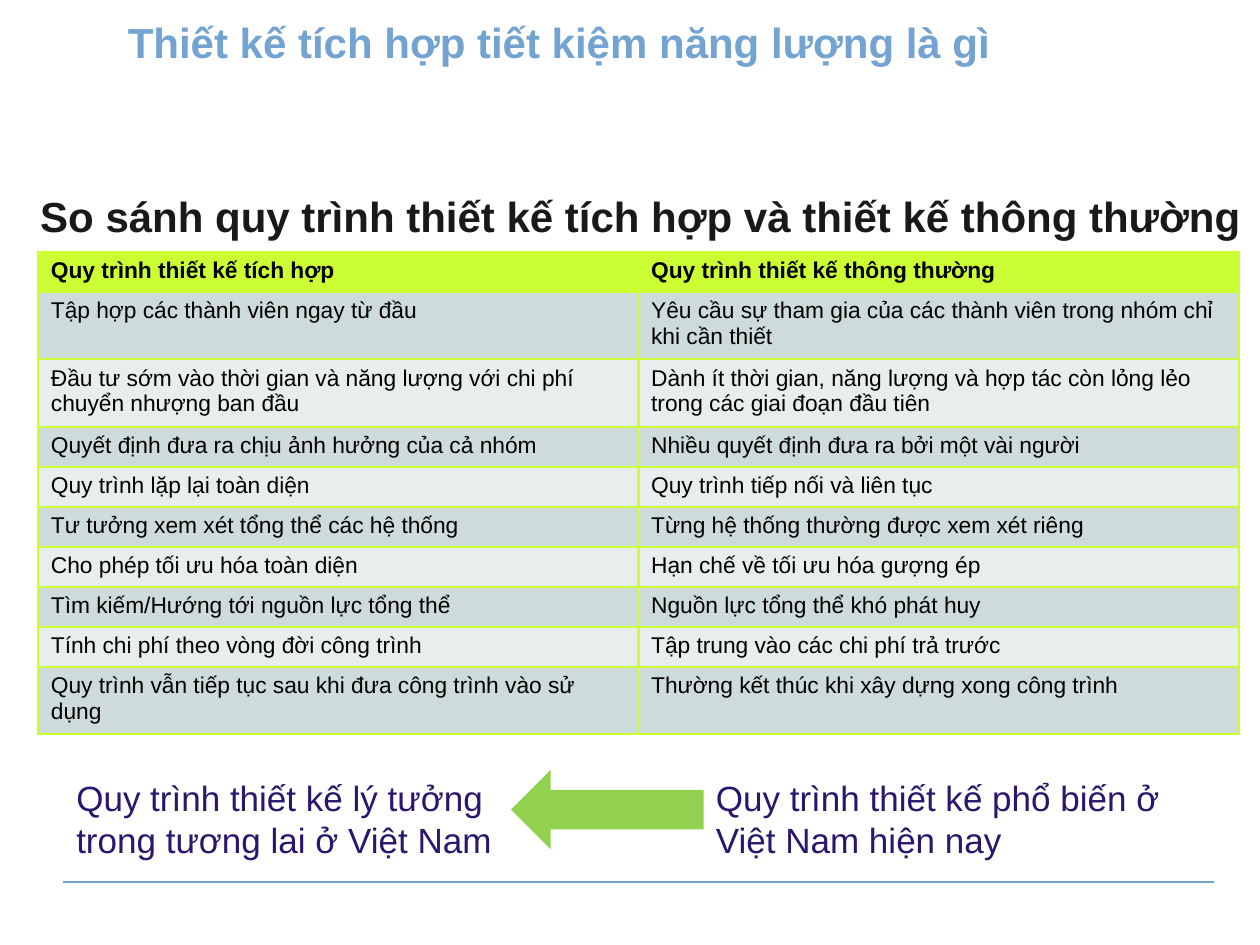
import pptx
import pptx.util
import pptx.dml.color
import pptx.enum.shapes
import pptx.enum.text
import pptx.oxml
import pptx.oxml.ns
from lxml import etree

Pt = pptx.util.Pt
Align = pptx.enum.text.PP_ALIGN
Anchor = pptx.enum.text.MSO_ANCHOR

# Content
HEAD = "Thiết kế tích hợp tiết kiệm năng lượng là gì"
TITLE = "So sánh quy trình thiết kế tích hợp và thiết kế thông thường"
IDEAL = "Quy trình thiết kế lý tưởng trong tương lai ở Việt Nam"
USUAL = "Quy trình thiết kế phổ biến ở Việt Nam hiện nay"
ROWS = [
    ("Quy trình thiết kế tích hợp", "Quy trình thiết kế thông thường"),
    ("Tập hợp các thành viên ngay từ đầu",
     "Yêu cầu sự tham gia của các thành viên trong nhóm chỉ khi cần thiết"),
    ("Đầu tư sớm vào thời gian và năng lượng với chi phí chuyển nhượng ban đầu",
     "Dành ít thời gian, năng lượng và hợp tác còn lỏng lẻo trong các giai đoạn đầu tiên"),
    ("Quyết định đưa ra chịu ảnh hưởng của cả nhóm",
     "Nhiều quyết định đưa ra bởi một vài người"),
    ("Quy trình lặp lại toàn diện", "Quy trình tiếp nối và liên tục"),
    ("Tư tưởng xem xét tổng thể các hệ thống",
     "Từng hệ thống thường được xem xét riêng"),
    ("Cho phép tối ưu hóa toàn diện", "Hạn chế về tối ưu hóa gượng ép"),
    ("Tìm kiếm/Hướng tới nguồn lực tổng thể", "Nguồn lực tổng thể khó phát huy"),
    ("Tính chi phí theo vòng đời công trình",
     "Tập trung vào các chi phí trả trước"),
    ("Quy trình vẫn tiếp tục sau khi đưa công trình vào sử dụng",
     "Thường kết thúc khi xây dựng xong công trình"),
]
TALL = {1, 2, 9}  # rows with two lines of text
LOW, HIGH = 22.9, 38.3

COLORS = {
    "blue": "73A3D1", "ink": "191919", "navy": "2B166E", "black": "000000",
    "lime": "CCFF33", "green": "92D050", "dark": "CEDBDB", "light": "E8EEEE",
}


def color(name):
    return pptx.dml.color.RGBColor.from_string(COLORS[name])


def write(frame, text, size=20, tint="navy", bold=False, align=Align.LEFT):
    frame.word_wrap = True
    para = frame.paragraphs[0]
    para.text = text
    para.alignment = align
    font = para.runs[0].font
    font.name, font.size, font.bold = "Arial", Pt(size), bold
    font.color.rgb = color(tint)


def note(text, left, top, width, height, **style):
    box = slide.shapes.add_textbox(Pt(left), Pt(top), Pt(width), Pt(height))
    write(box.text_frame, text, **style)


def border(cell, tint, width):
    props = cell._tc.get_or_add_tcPr()
    for side in ("lnL", "lnR", "lnT", "lnB"):
        props.append(pptx.oxml.parse_xml(
            f'<a:{side} {pptx.oxml.ns.nsdecls("a")} w="{Pt(width)}">'
            f'<a:solidFill><a:srgbClr val="{COLORS[tint]}"/></a:solidFill>'
            f'</a:{side}>'))


deck = pptx.Presentation()
deck.slide_width, deck.slide_height = Pt(720), Pt(540)
slide = deck.slides.add_slide(deck.slide_layouts[5])

# Rule at the foot
rule = slide.shapes.add_connector(
    pptx.enum.shapes.MSO_CONNECTOR.STRAIGHT, Pt(36), Pt(504), Pt(694), Pt(504))
rule.line.color.rgb = color("blue")
rule.line.width = Pt(1.5)
etree.SubElement(rule._element.spPr, pptx.oxml.ns.qn("a:effectLst"))

# Title
title = slide.shapes.title
title.left, title.top, title.width, title.height = Pt(12.2), Pt(78), Pt(707.8), Pt(90)
write(title.text_frame, TITLE, size=24, tint="ink", bold=True, align=Align.CENTER)
title.text_frame.vertical_anchor = Anchor.MIDDLE
title.text_frame.auto_size = pptx.enum.text.MSO_AUTO_SIZE.NONE

# Notes under the table, with the arrow between them
note(USUAL, 402, 440, 304, 52.5)
note(IDEAL, 36.5, 440, 269.5, 52.5)
arrow = slide.shapes.add_shape(
    pptx.enum.shapes.MSO_SHAPE.RIGHT_ARROW, Pt(292), Pt(440), Pt(110), Pt(45.3))
arrow.rotation = 180
arrow.shadow.inherit = False
arrow.fill.solid()
arrow.fill.fore_color.rgb = color("green")
arrow.line.fill.background()

# Heading at the top
note(HEAD, 66, 6, 510, 36, size=24, tint="blue", bold=True)

# Table of the two processes
heights = [HIGH if i in TALL else LOW for i in range(len(ROWS))]
table = slide.shapes.add_table(
    len(ROWS), 2, Pt(21.9), Pt(144), Pt(686), Pt(sum(heights))).table
for col in table.columns:
    col.width = Pt(343)
for i, row in enumerate(ROWS):
    table.rows[i].height = Pt(heights[i])
    shade = "lime" if i == 0 else ("light", "dark")[i % 2]
    for j, text in enumerate(row):
        cell = table.cell(i, j)
        write(cell.text_frame, text, size=13, tint="black", bold=i == 0)
        border(cell, "lime", 1.5)
        cell.fill.solid()
        cell.fill.fore_color.rgb = color(shade)

deck.save("out.pptx")
